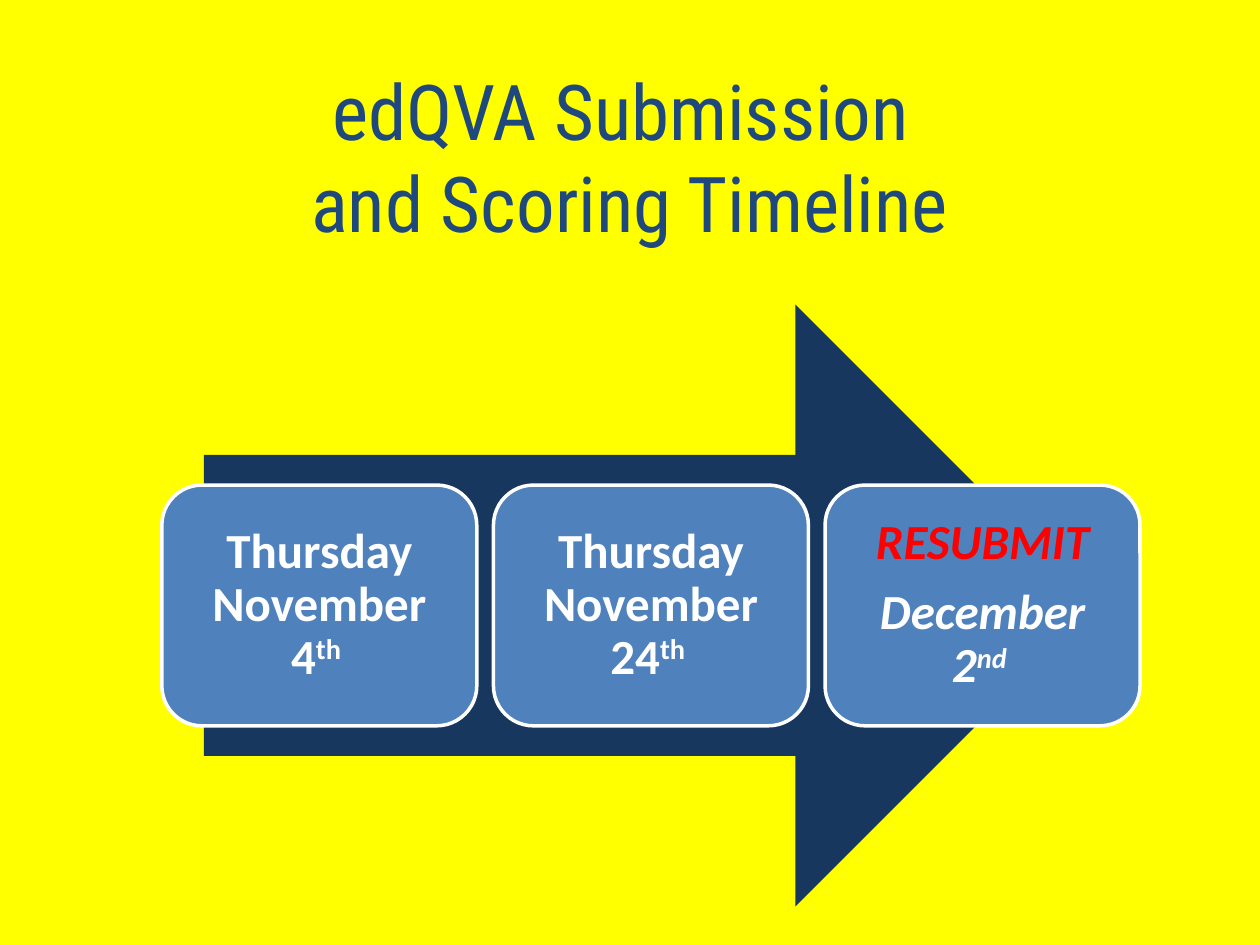
import pptx
import pptx.dml.color
import pptx.enum.shapes
import pptx.enum.text
import pptx.util

Pt = pptx.util.Pt
RGBColor = pptx.dml.color.RGBColor
MSO_SHAPE = pptx.enum.shapes.MSO_SHAPE

YELLOW = RGBColor(0xFF, 0xFF, 0x00)
TITLE_BLUE = RGBColor(0x1F, 0x49, 0x7D)
ARROW_NAVY = RGBColor(0x17, 0x37, 0x5E)
STEP_BLUE = RGBColor(0x4F, 0x81, 0xBD)
WHITE = RGBColor(0xFF, 0xFF, 0xFF)
RED = RGBColor(0xFF, 0x00, 0x00)

# Each step: paragraphs of (text, ordinal suffix, colour), and whether italic
STEPS = [
    ([("Thursday November 4", "th ", WHITE)], False),
    ([("Thursday November 24", "th ", WHITE)], False),
    ([("RESUBMIT", "", RED), ("December 2", "nd ", WHITE)], True),
]


def add_text(paragraph, text, *, font, size, color, bold=False, italic=False, raised=False):
    run = paragraph.add_run()
    run.text = text
    run.font.name = font
    run.font.size = Pt(size)
    run.font.color.rgb = color
    run.font.bold = bold
    run.font.italic = italic
    if raised:
        run.font._element.set("baseline", "30000")


def add_filled_shape(slide, preset, box, fill):
    shape = slide.shapes.add_shape(preset, *map(Pt, box))
    shape.shadow.inherit = False
    shape.fill.solid()
    shape.fill.fore_color.rgb = fill
    shape.line.fill.background()
    return shape


def add_title(slide, box, lines):
    frame = slide.shapes.add_textbox(*map(Pt, box)).text_frame
    frame.word_wrap = True
    frame.vertical_anchor = pptx.enum.text.MSO_ANCHOR.MIDDLE
    heading = frame.paragraphs[0]
    heading.alignment = pptx.enum.text.PP_ALIGN.CENTER
    for index, line in enumerate(lines):
        if index:
            heading.add_line_break()
        add_text(heading, line, font="Roboto Condensed", size=44, color=TITLE_BLUE)


def add_step(slide, box, dates, italic):
    step = add_filled_shape(slide, MSO_SHAPE.ROUNDED_RECTANGLE, box, STEP_BLUE)
    step.line.color.rgb = WHITE
    step.line.width = Pt(2)
    frame = step.text_frame
    frame.word_wrap = True
    frame.vertical_anchor = pptx.enum.text.MSO_ANCHOR.MIDDLE
    frame.margin_left = frame.margin_right = Pt(8.4)
    frame.margin_top = frame.margin_bottom = Pt(8.4)
    for index, (text, suffix, color) in enumerate(dates):
        date = frame.add_paragraph() if index else frame.paragraphs[0]
        date.alignment = pptx.enum.text.PP_ALIGN.CENTER
        date.line_spacing = 0.9
        if index < len(dates) - 1:
            date.space_after = Pt(9.8)
        style = dict(font="Calibri", size=28, color=color, bold=True, italic=italic)
        add_text(date, text, **style)
        if suffix:
            add_text(date, suffix, raised=True, **style)


def add_timeline(slide, box, steps):
    left, top, width, height = box
    # Arrow behind the steps
    arrow_width = 510
    arrow_left = left + (width - arrow_width) / 2 - 0.5
    add_filled_shape(slide, MSO_SHAPE.RIGHT_ARROW,
                     (arrow_left, top, arrow_width, height), ARROW_NAVY)
    # Equal steps, centred on the arrow's height
    gap = 9.5
    step_width = (width - gap * (len(steps) - 1)) / len(steps)
    step_height = height * 0.4
    step_top = top + (height - step_height) / 2
    for index, (dates, italic) in enumerate(steps):
        step_left = left + index * (step_width + gap)
        add_step(slide, (step_left, step_top, step_width, step_height), dates, italic)


def main():
    deck = pptx.Presentation()
    deck.slide_width, deck.slide_height = Pt(720), Pt(540)
    slide = deck.slides.add_slide(deck.slide_layouts[6])
    slide.background.fill.solid()
    slide.background.fill.fore_color.rgb = YELLOW

    add_title(slide, (36, 44, 648, 90), ["edQVA Submission ", "and Scoring Timeline"])
    add_timeline(slide, (92.5, 174, 559, 344), STEPS)
    deck.save("out.pptx")


if __name__ == "__main__":
    main()
